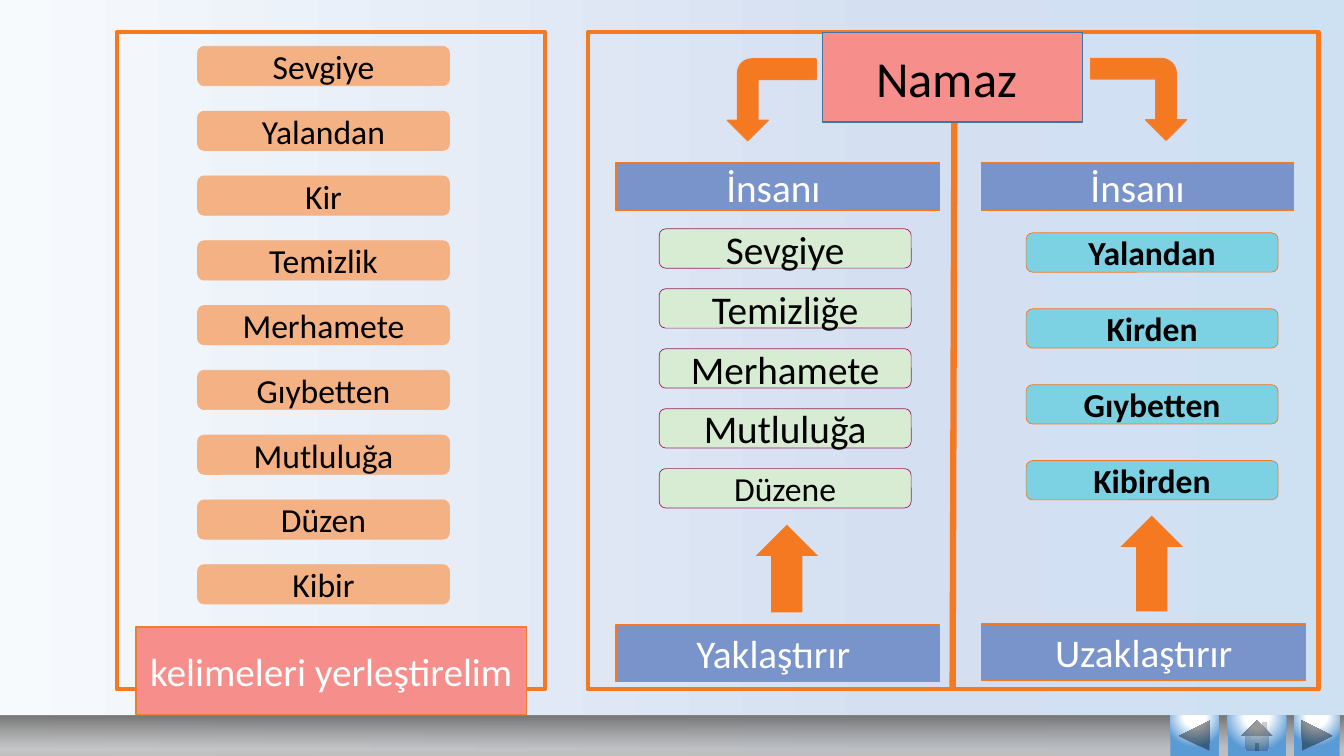
from lxml import etree
from pptx import Presentation
from pptx.dml.color import RGBColor
from pptx.enum.shapes import MSO_CONNECTOR, MSO_SHAPE as Shape
from pptx.enum.text import MSO_ANCHOR, PP_ALIGN
from pptx.oxml.ns import qn
from pptx.util import Inches, Pt

WIDTH, HEIGHT = Inches(13.33), Inches(7.5)
CARD_WIDTH, CARD_HEIGHT = 18.75, 5.2
FRAME_TOP, FRAME_HEIGHT = 4.27, 86.93
BAR_TOP, BAR_HEIGHT = 94.67, 5.33

COLORS = {
    "orange": "F57921", "arrow_edge": "F47C2E", "caption_edge": "ED7D31",
    "peach": "F4B183", "pink": "F68F8B", "title_edge": "43739E",
    "blue": "7993CB", "cyan": "7CD2E3", "green": "D8ECD3", "plum": "9C2068",
    "black": "000000", "white": "FFFFFF", "sky": "5B9BD5",
    "dawn": "F7FAFD", "haze": "D4DFF1", "day": "CEE1F2",
    "silver": "C0C0C0", "gray": "B3B3B3", "steel": "777777",
}


def color(name):
    return RGBColor.from_string(COLORS[name])


def across(share):
    return round(WIDTH * share / 100)


def down(share):
    return round(HEIGHT * share / 100)


def add_gradient(fill, owner, stops, angle=None):
    fill.gradient()
    gradient = next(owner.iter(qn("a:gradFill")))
    for child in list(gradient):
        gradient.remove(child)
    stop_list = etree.SubElement(gradient, qn("a:gsLst"))
    for position, name, opacity in stops:
        stop = etree.SubElement(stop_list, qn("a:gs"), pos=str(position * 1000))
        tone = etree.SubElement(stop, qn("a:srgbClr"), val=COLORS[name])
        if opacity < 100:
            etree.SubElement(tone, qn("a:alpha"), val=str(opacity * 1000))
    if angle is None:
        radial = etree.SubElement(gradient, qn("a:path"), path="circle")
        etree.SubElement(radial, qn("a:fillToRect"),
                         l="50000", t="-80000", r="50000", b="180000")
    else:
        etree.SubElement(gradient, qn("a:lin"), ang=str(angle * 60000), scaled="0")


def add_box(page, kind, place, fill=None, edge=None, weight=1):
    left, top, width, height = place
    box = page.shapes.add_shape(kind, across(left), down(top), across(width), down(height))
    box.shadow.inherit = False
    if fill:
        box.fill.solid()
        box.fill.fore_color.rgb = color(fill)
    else:
        box.fill.background()
    if edge:
        box.line.color.rgb = color(edge)
        box.line.width = Pt(weight)
    else:
        box.line.fill.background()
    return box


def write(box, text, size, ink, bold=False):
    frame = box.text_frame
    frame.word_wrap = True
    frame.vertical_anchor = MSO_ANCHOR.MIDDLE
    para = frame.paragraphs[0]
    para.alignment = PP_ALIGN.CENTER
    span = para.add_run()
    span.text = text
    span.font.name = "Calibri"
    span.font.size = Pt(size)
    span.font.bold = bold
    span.font.color.rgb = color(ink)


def add_label(page, text, place, fill, edge, size=28, ink="white"):
    write(add_box(page, Shape.RECTANGLE, place, fill, edge), text, size, ink)


def add_cards(page, words, left, top, pitch, fill, edge, bold=False):
    for row, (word, size) in enumerate(words):
        place = (left, top + row * pitch, CARD_WIDTH, CARD_HEIGHT)
        box = add_box(page, Shape.ROUNDED_RECTANGLE, place, fill, edge, 0.5)
        write(box, word, size, "black", bold)


def add_divider(page):
    line = page.shapes.add_connector(
        MSO_CONNECTOR.STRAIGHT, across(71.03), down(FRAME_TOP),
        across(70.88), down(FRAME_TOP + FRAME_HEIGHT))
    line.line.color.rgb = color("orange")
    line.line.width = Pt(4.5)
    etree.SubElement(line._element.spPr, qn("a:effectLst"))


def add_bent_arrow(page, place, bend, mirrored=False):
    arrow = add_box(page, Shape.BENT_ARROW, place, "orange", "arrow_edge")
    for index, value in enumerate((0.25, 0.25, 0.25, bend)):
        arrow.adjustments[index] = value
    arrow.rotation = 90
    if mirrored:
        arrow._element.spPr.find(qn("a:xfrm")).set("flipV", "1")


def add_up_arrow(page, place):
    add_box(page, Shape.RIGHT_ARROW, place, "orange").rotation = 270


def add_navigation(page):
    bar = add_box(page, Shape.RECTANGLE, (0, BAR_TOP, 100, BAR_HEIGHT))
    add_gradient(bar.fill, bar._element,
                 [(0, "silver", 100), (17, "gray", 70), (100, "steel", 100)], 270)
    buttons = [
        (Shape.ACTION_BUTTON_BACK_OR_PREVIOUS, 87.08, 3.6),
        (Shape.ACTION_BUTTON_HOME, 91.35, 4.35),
        (Shape.ACTION_BUTTON_FORWARD_OR_NEXT, 96.3, 3.38),
    ]
    for kind, left, width in buttons:
        button = add_box(page, kind, (left, BAR_TOP, width, BAR_HEIGHT))
        add_gradient(button.fill, button._element,
                     [(0, "white", 100), (35, "white", 100), (100, "sky", 100)])


def main():
    deck = Presentation()
    deck.slide_width, deck.slide_height = WIDTH, HEIGHT
    page = deck.slides.add_slide(deck.slide_layouts[6])
    add_gradient(page.background.fill, page._element,
                 [(0, "dawn", 100), (67, "haze", 100), (100, "day", 100)], 0)

    add_divider(page)
    for left, width in ((8.7, 31.88), (43.73, 54.38)):
        add_box(page, Shape.RECTANGLE, (left, FRAME_TOP, width, FRAME_HEIGHT),
                edge="orange", weight=3)

    pool = ["Sevgiye", "Yalandan", "Kir", "Temizlik", "Merhamete",
            "Gıybetten", "Mutluluğa", "Düzen", "Kibir"]
    nearer = [("Sevgiye", 28), ("Temizliğe", 28), ("Merhamete", 28),
              ("Mutluluğa", 28), ("Düzene", 24)]
    farther = ["Yalandan", "Kirden", "Gıybetten", "Kibirden"]
    add_cards(page, [(word, 24) for word in pool], 14.7, 6.13, 8.57, "peach", "peach")
    add_cards(page, nearer, 49.05, 30.27, 7.93, "green", "plum")
    add_cards(page, [(word, 24) for word in farther], 76.35, 30.8, 10.04,
              "cyan", "orange", bold=True)

    headings = [
        ("İnsanı ", (45.83, 21.47, 24.08, 6.4)),
        ("İnsanı", (73.05, 21.47, 23.18, 6.4)),
        ("Yaklaştırır ", (45.83, 82.67, 24.08, 7.47)),
        ("Uzaklaştırır", (73.05, 82.53, 24.08, 7.47)),
    ]
    for text, place in headings:
        add_label(page, text, place, "blue", "orange")
    add_label(page, "Namaz ", (61.2, FRAME_TOP, 19.35, 11.87),
              "pink", "title_edge", 36, "black")

    add_bent_arrow(page, (81.68, 6.8, 6.08, 12.67), 0.184)
    add_bent_arrow(page, (54.38, 7.33, 6.08, 11.73), 0.171, mirrored=True)
    add_up_arrow(page, (55.28, 71.07, 6.53, 8.27))
    add_up_arrow(page, (82.13, 70.4, 7.13, 8.27))

    add_navigation(page)
    add_label(page, "kelimeleri yerleştirelim ", (10.13, 82.93, 29.03, 11.6),
              "pink", "caption_edge")
    deck.save("out.pptx")


if __name__ == "__main__":
    main()
